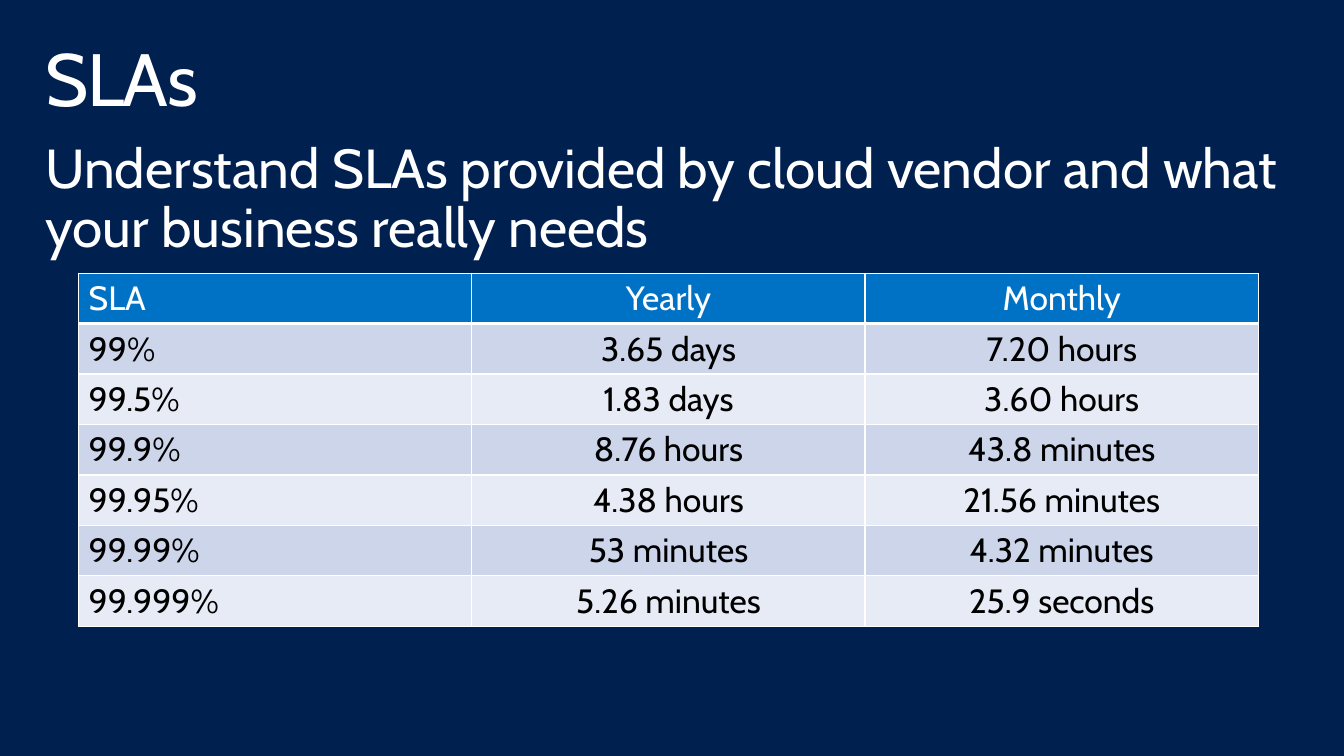
import pptx
import pptx.dml.color
import pptx.enum.text
import pptx.oxml
import pptx.oxml.ns
import pptx.util

PX = 9144
FONT = "Cabin"
NAVY = pptx.dml.color.RGBColor(0x00, 0x20, 0x50)
WHITE = pptx.dml.color.RGBColor(0xFF, 0xFF, 0xFF)
BLACK = pptx.dml.color.RGBColor(0x00, 0x00, 0x00)
BLUE = pptx.dml.color.RGBColor(0x00, 0x72, 0xC6)
BAND_DARK = pptx.dml.color.RGBColor(0xCC, 0xD5, 0xEA)
BAND_LIGHT = pptx.dml.color.RGBColor(0xE7, 0xEB, 0xF5)

DOWNTIME = [
    ("SLA", "Yearly", "Monthly"),
    ("99%", "3.65 days", "7.20 hours"),
    ("99.5%", "1.83 days", "3.60 hours"),
    ("99.9%", "8.76 hours", "43.8 minutes"),
    ("99.95%", "4.38 hours", "21.56 minutes"),
    ("99.99%", "53 minutes", "4.32 minutes"),
    ("99.999%", "5.26 minutes", "25.9 seconds"),
]


def px(length):
    return pptx.util.Emu(length * PX)


def style_font(font, size, color):
    font.name = FONT
    font.size = pptx.util.Pt(size)
    font.color.rgb = color


def add_text(page, left, top, width, height, text, size):
    box = page.shapes.add_textbox(px(left), px(top), px(width), px(height))
    frame = box.text_frame
    frame.word_wrap = True
    frame.margin_left = frame.margin_right = px(16)
    frame.margin_top = frame.margin_bottom = px(10)
    para = frame.paragraphs[0]
    para.line_spacing = 0.9
    span = para.add_run()
    span.text = text
    style_font(para.font, size, WHITE)
    return span


def set_border(cell, side, width):
    line = pptx.oxml.parse_xml(
        f'<a:ln{side} {pptx.oxml.ns.nsdecls("a")} w="{pptx.util.Pt(width)}">'
        f'<a:solidFill><a:srgbClr val="{WHITE}"/></a:solidFill></a:ln{side}>'
    )
    cell._tc.get_or_add_tcPr().append(line)


def fill_cell(cell, text, row, column):
    header = row == 0
    for side in "LRTB":
        heavy = (row, side) in ((0, "B"), (1, "T"))
        set_border(cell, side, 3 if heavy else 1)
    cell.fill.solid()
    cell.fill.fore_color.rgb = BLUE if header else BAND_DARK if row % 2 else BAND_LIGHT
    cell.text = text
    para = cell.text_frame.paragraphs[0]
    style_font(para.font, 24, WHITE if header else BLACK)
    if column:
        para.alignment = pptx.enum.text.PP_ALIGN.CENTER


def add_downtime_table(page, left, top, column_width, row_height):
    rows, columns = len(DOWNTIME), len(DOWNTIME[0])
    table = page.shapes.add_table(
        rows, columns, px(left), px(top),
        px(column_width * columns), px(row_height * rows),
    ).table
    table.first_row = False
    table.horz_banding = False
    for row, texts in enumerate(DOWNTIME):
        for column, text in enumerate(texts):
            fill_cell(table.cell(row, column), text, row, column)


def main():
    deck = pptx.Presentation()
    deck.slide_width, deck.slide_height = px(1333), px(750)
    page = deck.slides.add_slide(deck.slide_layouts[6])
    page.background.fill.solid()
    page.background.fill.fore_color.rgb = NAVY
    title = add_text(page, 29, 32, 1275, 98, "SLAs", 52.9)
    title.font._element.set("spc", "-100")
    add_text(
        page, 29, 130, 1274, 139,
        "Understand SLAs provided by cloud vendor and what your business really needs",
        39.2,
    )
    add_downtime_table(page, 78, 271, 390, 50)
    deck.save("out.pptx")


if __name__ == "__main__":
    main()
